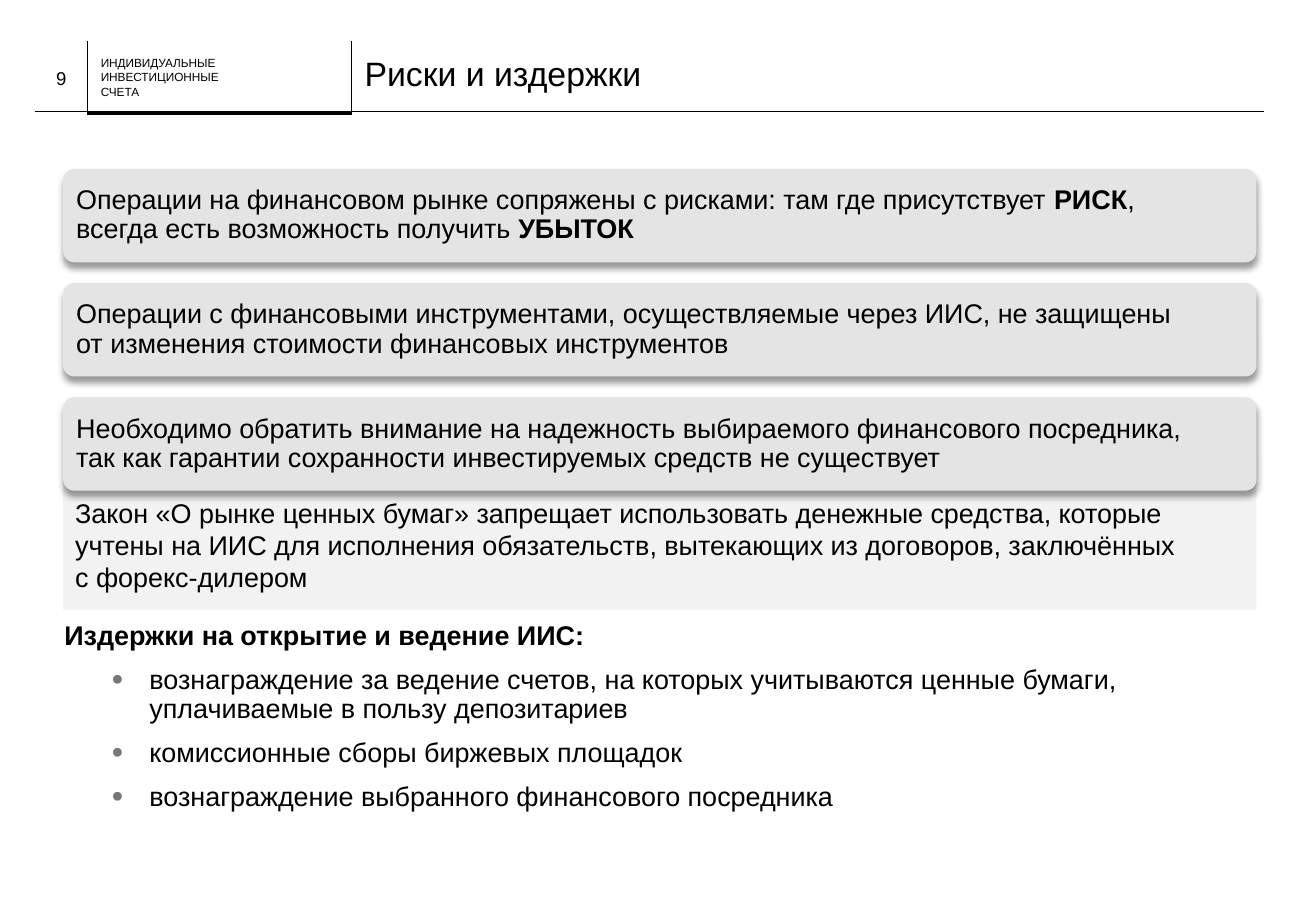
from dataclasses import dataclass

from lxml.etree import SubElement
from pptx import Presentation
from pptx.dml.color import RGBColor
from pptx.enum.shapes import MSO_CONNECTOR, MSO_SHAPE
from pptx.enum.text import MSO_ANCHOR as Anchor, MSO_AUTO_SIZE as AutoSize, PP_ALIGN as Align
from pptx.oxml.ns import qn
from pptx.util import Emu, Pt

EMU_PER_PX = 9144
FONT = "Arial"
BODY_SIZE = 16
BLACK = RGBColor(0x00, 0x00, 0x00)
CARD_FILL = RGBColor(0xE4, 0xE4, 0xE4)
NOTE_FILL = RGBColor(0xF2, 0xF2, 0xF2)
BULLET_GREY = RGBColor(0x77, 0x77, 0x7A)


@dataclass(frozen=True)
class Box:
    left: int
    top: int
    width: int
    height: int


@dataclass(frozen=True)
class Rule:
    start: tuple[int, int]
    end: tuple[int, int]
    weight: float = 0.25


@dataclass(frozen=True)
class Part:
    text: str
    bold: bool = False


RULES = [
    Rule((72, 92), (29, 92)),
    Rule((290, 93), (72, 93), 2.25),
    Rule((1040, 92), (288, 92)),
    Rule((72, 93), (72, 34)),
    Rule((289, 93), (289, 34)),
]

CARD_TOP, CARD_PITCH = 139, 94
CARDS = [
    [
        Part("Операции на финансовом рынке сопряжены с рисками: там где присутствует "),
        Part("РИСК", True),
        Part(",\nвсегда есть возможность получить "),
        Part("УБЫТОК", True),
    ],
    [Part("Операции с финансовыми инструментами, осуществляемые через ИИС, не защищены\n"
          "от изменения стоимости финансовых инструментов")],
    [Part("Необходимо обратить внимание на надежность выбираемого финансового посредника,\n"
          "так как гарантии сохранности инвестируемых средств не существует")],
]

NOTE = ("Закон «О рынке ценных бумаг» запрещает использовать денежные средства, которые "
        "учтены на ИИС для исполнения обязательств, вытекающих из договоров, заключённых\n"
        "с форекс-дилером")

COSTS = [
    "вознаграждение за ведение счетов, на которых учитываются ценные бумаги, "
    "уплачиваемые в пользу депозитариев",
    "комиссионные сборы биржевых площадок",
    "вознаграждение выбранного финансового посредника",
]


def px(value: int) -> Emu:
    return Emu(value * EMU_PER_PX)


def edges(box: Box) -> tuple[Emu, Emu, Emu, Emu]:
    return px(box.left), px(box.top), px(box.width), px(box.height)


def set_frame(frame, side: int = 0, upright: int = 0, anchor=Anchor.MIDDLE) -> None:
    frame.word_wrap = True
    frame.auto_size = AutoSize.NONE
    frame.vertical_anchor = anchor
    frame.margin_left = frame.margin_right = px(side)
    frame.margin_top = frame.margin_bottom = px(upright)


def write(paragraph, parts: list[Part], size: int = BODY_SIZE, align=Align.LEFT) -> None:
    paragraph.alignment = align
    for part in parts:
        for index, line in enumerate(part.text.split("\n")):
            if index:
                paragraph.add_line_break()
                SubElement(paragraph._p[-1], qn("a:rPr"), sz=str(size * 100))
            run = paragraph.add_run()
            run.text = line
            run.font.name = FONT
            run.font.size = Pt(size)
            run.font.bold = part.bold
            run.font.color.rgb = BLACK


def set_spacing(paragraph) -> None:
    paragraph.line_spacing = 0.9
    paragraph.space_before = Pt(8.8)


def add_bullet(paragraph) -> None:
    properties = paragraph._p.get_or_add_pPr()
    properties.set("marL", str(px(70)))
    properties.set("indent", str(px(-31)))
    color = SubElement(properties, qn("a:buClr"))
    SubElement(color, qn("a:srgbClr"), val=str(BULLET_GREY))
    SubElement(properties, qn("a:buSzPct"), val="120000")
    SubElement(properties, qn("a:buFont"), typeface=FONT)
    SubElement(properties, qn("a:buChar"), char="•")


def add_rule(slide, rule: Rule) -> None:
    points = [px(value) for value in (*rule.start, *rule.end)]
    connector = slide.shapes.add_connector(MSO_CONNECTOR.STRAIGHT, *points)
    connector.line.color.rgb = BLACK
    connector.line.width = Pt(rule.weight)
    SubElement(connector._element.spPr, qn("a:effectLst"))


def add_panel(slide, kind, box: Box, fill: RGBColor):
    shape = slide.shapes.add_shape(kind, *edges(box))
    shape.shadow.inherit = False
    shape.fill.solid()
    shape.fill.fore_color.rgb = fill
    shape.line.fill.background()
    return shape


def add_card(slide, box: Box, parts: list[Part]) -> None:
    shape = add_panel(slide, MSO_SHAPE.ROUNDED_RECTANGLE, box, CARD_FILL)
    shape.adjustments[0] = 0.12
    effects = shape._element.spPr.find(qn("a:effectLst"))
    shadow = SubElement(effects, qn("a:outerShdw"), blurRad=str(Pt(4)), dist=str(Pt(3)),
                        dir="5400000", algn="t", rotWithShape="0")
    color = SubElement(shadow, qn("a:srgbClr"), val=str(BLACK))
    SubElement(color, qn("a:alpha"), val="40000")
    set_frame(shape.text_frame, side=8)
    paragraph = shape.text_frame.paragraphs[0]
    set_spacing(paragraph)
    write(paragraph, parts)


def add_label(slide, box: Box, text: str, size: int, align=Align.LEFT) -> None:
    frame = slide.shapes.add_textbox(*edges(box)).text_frame
    set_frame(frame)
    write(frame.paragraphs[0], [Part(text)], size, align)


def add_note(slide) -> None:
    shape = add_panel(slide, MSO_SHAPE.RECTANGLE, Box(52, 395, 982, 107), NOTE_FILL)
    set_frame(shape.text_frame, side=10, upright=5)
    write(shape.text_frame.paragraphs[0], [Part(NOTE)])


def add_costs(slide) -> None:
    frame = slide.shapes.add_textbox(*edges(Box(53, 512, 965, 221))).text_frame
    set_frame(frame, anchor=Anchor.TOP)
    heading = frame.paragraphs[0]
    set_spacing(heading)
    write(heading, [Part("Издержки на открытие и ведение ИИС:", True)])
    for cost in COSTS:
        paragraph = frame.add_paragraph()
        paragraph.level = 1
        set_spacing(paragraph)
        add_bullet(paragraph)
        write(paragraph, [Part(cost)])


def set_title(slide) -> None:
    title = slide.shapes.title
    title.left, title.top, title.width, title.height = edges(Box(300, 34, 741, 56))
    set_frame(title.text_frame)
    paragraph = title.text_frame.paragraphs[0]
    paragraph.line_spacing = 0.9
    write(paragraph, [Part("Риски и издержки")], 20)


def main() -> None:
    presentation = Presentation()
    presentation.slide_width, presentation.slide_height = px(1083), px(750)
    slide = presentation.slides.add_slide(presentation.slide_layouts[5])
    set_title(slide)
    for rule in RULES:
        add_rule(slide, rule)
    add_label(slide, Box(83, 46, 203, 35), "ИНДИВИДУАЛЬНЫЕ\nИНВЕСТИЦИОННЫЕ\nСЧЕТА", 7)
    add_label(slide, Box(29, 44, 43, 40), "9", 11, Align.CENTER)
    add_note(slide)
    add_costs(slide)
    for index, parts in enumerate(CARDS):
        add_card(slide, Box(52, CARD_TOP + index * CARD_PITCH, 982, 77), parts)
    presentation.save("out.pptx")


if __name__ == "__main__":
    main()
